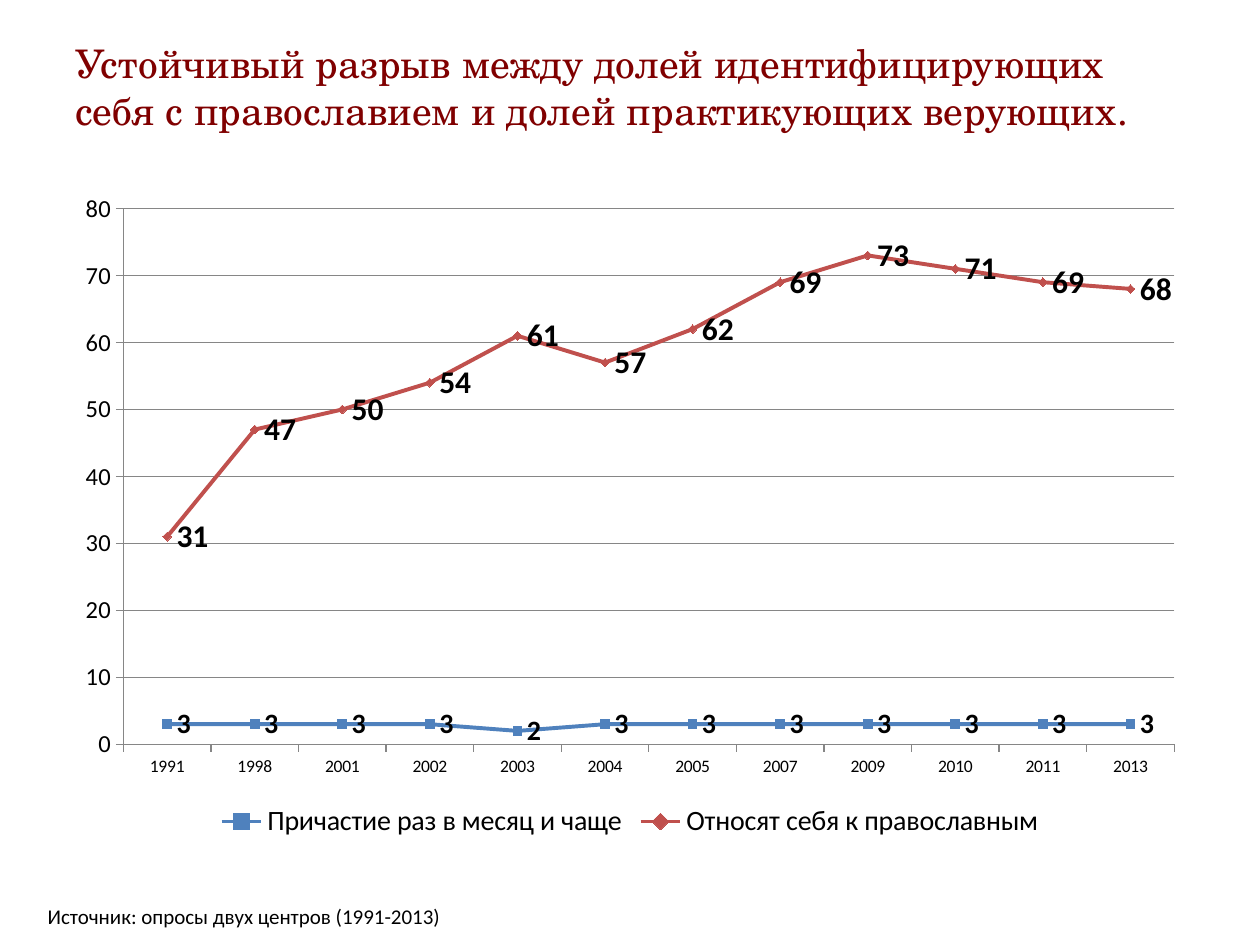
from dataclasses import dataclass

from pptx import Presentation
from pptx.chart.data import CategoryChartData
from pptx.dml.color import RGBColor
from pptx.enum.chart import (XL_CHART_TYPE, XL_LABEL_POSITION,
                             XL_LEGEND_POSITION, XL_MARKER_STYLE, XL_TICK_MARK)
from pptx.enum.text import MSO_ANCHOR
from pptx.util import Inches, Pt

LINE_MARKERS = XL_CHART_TYPE.LINE_MARKERS
RIGHT = XL_LABEL_POSITION.RIGHT
BOTTOM = XL_LEGEND_POSITION.BOTTOM
SQUARE, DIAMOND = XL_MARKER_STYLE.SQUARE, XL_MARKER_STYLE.DIAMOND
OUTSIDE = XL_TICK_MARK.OUTSIDE
MIDDLE = MSO_ANCHOR.MIDDLE


@dataclass(frozen=True)
class Theme:
    """Colours, fonts and type sizes of the slide."""
    title: str = "800000"
    text: str = "000000"
    grid: str = "868686"
    practice: str = "4F81BD"
    identity: str = "C0504D"
    serif: str = "TeX Gyre Schola"
    sans: str = "Calibri"
    title_size: float = 22.5
    source_size: float = 12
    category_size: float = 10
    value_size: float = 14
    legend_size: float = 16
    line_width: float = 2.25


THEME = Theme()
WIDTH, HEIGHT = Inches(10), Inches(7.5)
YEARS = ("1991", "1998", "2001", "2002", "2003", "2004",
         "2005", "2007", "2009", "2010", "2011", "2013")
SERIES = (
    ("Причастие раз в месяц и чаще", (3, 3, 3, 3, 2, 3, 3, 3, 3, 3, 3, 3),
     THEME.practice, SQUARE, 16),
    ("Относят себя к православным",
     (31, 47, 50, 54, 61, 57, 62, 69, 73, 71, 69, 68),
     THEME.identity, DIAMOND, 18),
)


def share(left, top, width, height):
    """Turn percentages of the slide into a box."""
    return tuple(int(part * size / 100) for part, size in
                 zip((left, top, width, height), (WIDTH, HEIGHT) * 2))


def style_font(font, size, color=THEME.text, name=THEME.sans, bold=False):
    """Set the look of a font."""
    font.name, font.size, font.bold = name, Pt(size), bold
    font.color.rgb = RGBColor.from_string(color)


def style_line(line, color, width):
    """Set a line's colour and width."""
    line.color.rgb = RGBColor.from_string(color)
    line.width = Pt(width)


def add_text(s, box, text, size, color, name):
    """Place one vertically centred paragraph in a box."""
    tf = s.shapes.add_textbox(*box).text_frame
    tf.word_wrap = True
    tf.vertical_anchor = MIDDLE
    r = tf.paragraphs[0].add_run()
    r.text = text
    style_font(r.font, size, color, name)


def style_series(series, color, marker, label_size):
    """Set a series' line, markers and value labels."""
    series.smooth = False
    style_line(series.format.line, color, THEME.line_width)
    series.marker.style, series.marker.size = marker, 5
    series.marker.format.fill.solid()
    series.marker.format.fill.fore_color.rgb = RGBColor.from_string(color)
    style_line(series.marker.format.line, color, 0.75)
    labels = series.data_labels
    labels.show_value = True
    labels.position = RIGHT
    style_font(labels.font, label_size, bold=True)


def style_axes(chart):
    """Set the scale, ticks, gridlines and type of both axes."""
    for axis, size in ((chart.category_axis, THEME.category_size),
                       (chart.value_axis, THEME.value_size)):
        axis.major_tick_mark = OUTSIDE
        style_line(axis.format.line, THEME.grid, 0.75)
        style_font(axis.tick_labels.font, size)
    axis = chart.value_axis
    axis.minimum_scale, axis.maximum_scale, axis.major_unit = 0, 80, 10
    axis.has_major_gridlines = True
    style_line(axis.major_gridlines.format.line, THEME.grid, 0.75)


def add_trend_chart(s, box):
    """Place the line chart with its legend in a box."""
    data = CategoryChartData()
    data.categories = YEARS
    for name, values, *_ in SERIES:
        data.add_series(name, values)
    chart = s.shapes.add_chart(LINE_MARKERS, *box, data).chart
    style_font(chart.font, THEME.category_size)
    chart.has_title = False
    chart.has_legend = True
    chart.legend.position = BOTTOM
    chart.legend.include_in_layout = False
    style_font(chart.legend.font, THEME.legend_size)
    style_axes(chart)
    plot = chart.plots[0]
    plot.vary_by_categories = False
    for series, (_, _, color, marker, size) in zip(plot.series, SERIES):
        style_series(series, color, marker, size)


def main():
    """Build and save the slide."""
    prs = Presentation()
    prs.slide_width, prs.slide_height = WIDTH, HEIGHT
    s = prs.slides.add_slide(prs.slide_layouts[6])
    add_text(s, share(5, 4, 90, 10.27),
             "Устойчивый разрыв между долей идентифицирующих себя "
             "с православием и долей практикующих верующих.",
             THEME.title_size, THEME.title, THEME.serif)
    add_trend_chart(s, share(5, 19.07, 90, 70.27))
    add_text(s, share(2.8, 93.87, 95.5, 6.13),
             "Источник: опросы двух центров (1991-2013)",
             THEME.source_size, THEME.text, THEME.sans)
    prs.save("out.pptx")


if __name__ == "__main__":
    main()
